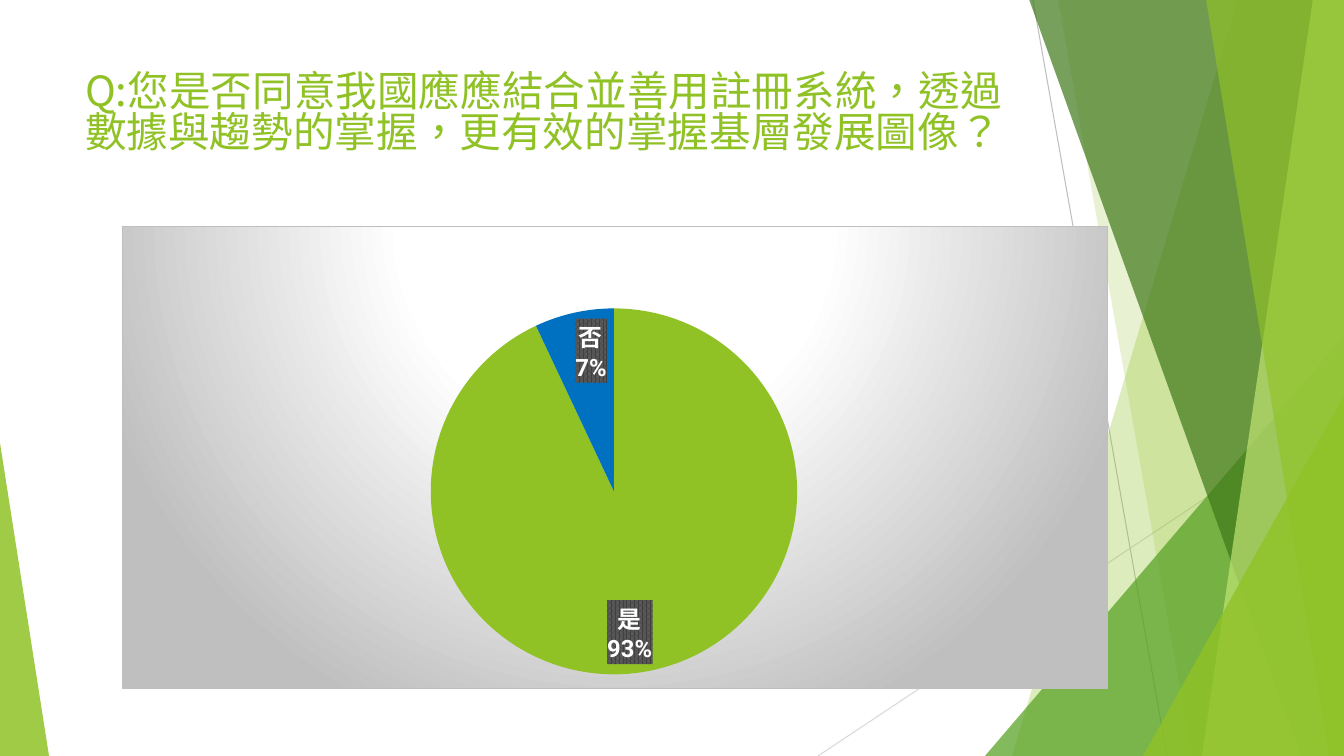
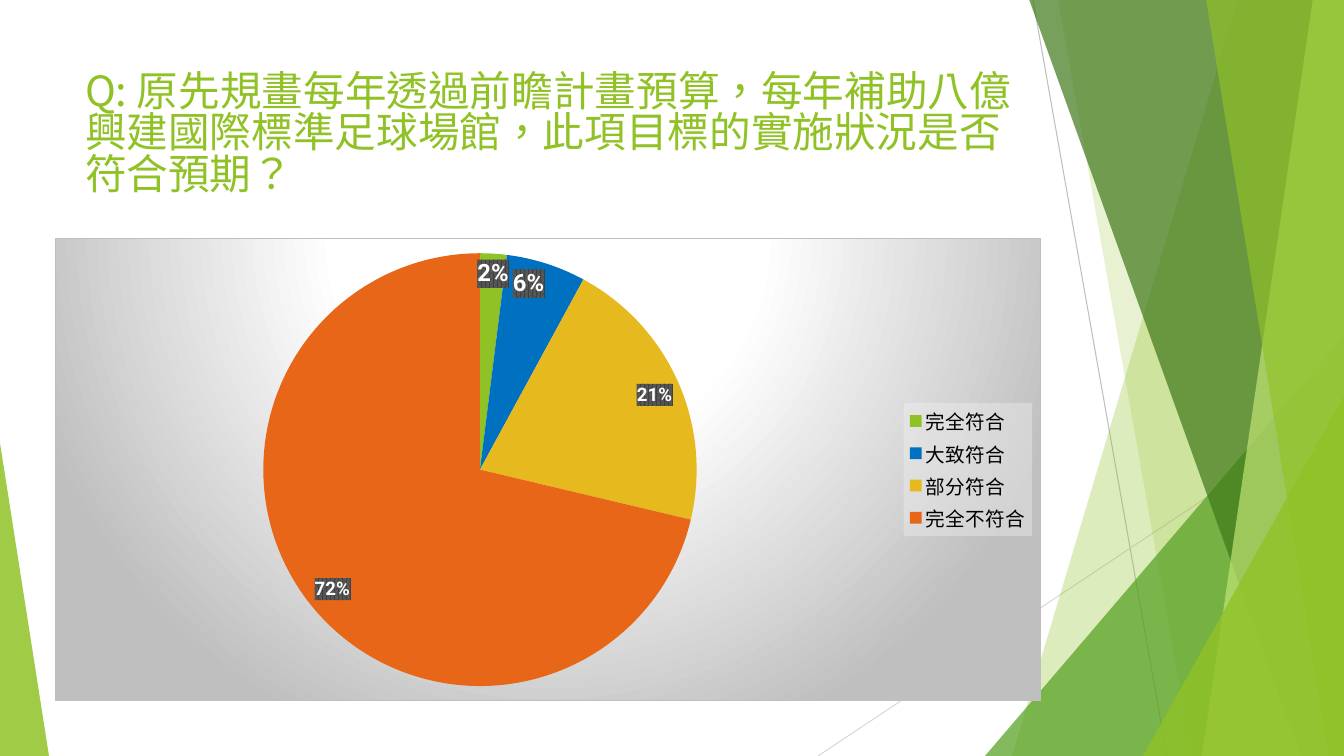
from dataclasses import dataclass
from typing import NamedTuple, Optional

from lxml.etree import SubElement
from pptx import Presentation
from pptx.chart.data import CategoryChartData
from pptx.dml.color import RGBColor
from pptx.enum.chart import XL_CHART_TYPE as ChartType
from pptx.enum.chart import XL_LABEL_POSITION as LabelPos
from pptx.enum.chart import XL_LEGEND_POSITION as LegendPos
from pptx.enum.shapes import MSO_CONNECTOR as Connector
from pptx.enum.shapes import MSO_SHAPE as Preset
from pptx.enum.text import MSO_ANCHOR as Anchor
from pptx.enum.text import MSO_AUTO_SIZE as AutoSize
from pptx.enum.text import PP_ALIGN as Align
from pptx.oxml import parse_xml
from pptx.oxml.ns import nsdecls, qn
from pptx.util import Emu, Pt

SLIDE_W, SLIDE_H = 1344, 756
EMU_PER_PX = 12192000 / SLIDE_W


def px(n: int) -> Emu:
    return Emu(round(n * EMU_PER_PX))


@dataclass(frozen=True)
class Theme:
    lime: str = "90C226"
    leaf: str = "54A021"
    forest: str = "3F7819"
    pale: str = "C0E474"
    blue: str = "0070C0"
    gold: str = "E6B91E"
    orange: str = "E76618"
    white: str = "FFFFFF"
    black: str = "000000"
    silver: str = "BFBFBF"
    mist: str = "D9D9D9"
    legend_back: str = "F2F2F2"
    label_dark: str = "404040"
    label_light: str = "595959"
    title_font: str = "Noto Sans CJK SC"
    chart_font: str = "Roboto"
    title_size: float = 29.7
    title_spacing: float = 0.83
    chart_size: float = 10
    legend_size: float = 14
    label_size: float = 13.3
    big_label_size: float = 17
    hairline: float = 0.75


THEME = Theme()
SLICE_COLORS = (THEME.lime, THEME.blue, THEME.gold, THEME.orange)


class Box(NamedTuple):
    x: int
    y: int
    w: int
    h: int

    def emu(self) -> tuple:
        return tuple(px(n) for n in self)


class Ray(NamedTuple):
    start: tuple
    end: tuple
    color: str


class Blade(NamedTuple):
    """A band that fills the right edge, left of it bounded by a slanted line."""
    top_x: int
    bottom_x: int
    color: str
    opacity: int


class Wedge(NamedTuple):
    box: Box
    tip: float
    color: str
    opacity: int


class Question(NamedTuple):
    title: str
    chart: Box
    pie: Box
    answers: dict
    big_labels: int
    has_legend: bool


TITLE_BOX = Box(75, 68, 948, 145)

RAYS = (
    Ray((1033, 0), (1167, SLIDE_H), THEME.silver),
    Ray((SLIDE_W, 406), (818, SLIDE_H), THEME.mist),
)
FACETS = (
    Blade(1238, 1012, THEME.lime, 30),
    Blade(1058, 1192, THEME.lime, 20),
    Wedge(Box(985, 336, 359, 420), 1, THEME.leaf, 72),
    Blade(1029, 1301, THEME.forest, 70),
    Blade(1313, 1202, THEME.pale, 70),
    Blade(1206, 1329, THEME.lime, 65),
    Wedge(Box(1143, 396, 201, 360), 1, THEME.lime, 80),
    Wedge(Box(0, 443, 49, 313), 0, THEME.lime, 85),
)

QUESTIONS = (
    Question(
        "Q:您是否同意我國應應結合並善用註冊系統，透過數據與趨勢的掌握，更有效的掌握基層發展圖像？",
        Box(122, 226, 986, 463), Box(431, 308, 367, 367),
        {"是": 93, "否": 7}, big_labels=2, has_legend=False,
    ),
    Question(
        "Q: 原先規畫每年透過前瞻計畫預算，每年補助八億興建國際標準足球場館，此項目標的實施狀況是否符合預期？",
        Box(55, 238, 986, 463), Box(263, 253, 434, 434),
        {"完全符合": 2, "大致符合": 6, "部分符合": 21, "完全不符合": 72},
        big_labels=2, has_legend=True,
    ),
)


def set_fill(shape, color: str, opacity: int) -> None:
    shape.shadow.inherit = False
    shape.line.fill.background()
    shape.fill.solid()
    shape.fill.fore_color.rgb = RGBColor.from_string(color)
    clr = shape.element.spPr.find(".//" + qn("a:srgbClr"))
    SubElement(clr, qn("a:alpha")).set("val", str(opacity * 1000))


def add_ray(s, ray: Ray):
    line = s.shapes.add_connector(
        Connector.STRAIGHT, *(px(n) for n in ray.start + ray.end))
    line.line.color.rgb = RGBColor.from_string(ray.color)
    line.line.width = Pt(THEME.hairline)
    SubElement(line.element.spPr, qn("a:effectLst"))
    return line


def add_facet(s, facet):
    if isinstance(facet, Wedge):
        shape = s.shapes.add_shape(Preset.ISOSCELES_TRIANGLE, *facet.box.emu())
        shape.adjustments[0] = facet.tip
    else:
        outline = s.shapes.build_freeform(facet.top_x, -1, scale=EMU_PER_PX)
        outline.add_line_segments(
            [(SLIDE_W, -1), (SLIDE_W, SLIDE_H), (facet.bottom_x, SLIDE_H)])
        shape = outline.convert_to_shape()
    set_fill(shape, facet.color, facet.opacity)
    return shape


def dress_layout(layout, s) -> None:
    """Draw the facets on a slide, then move them behind the layout's title."""
    for holder in list(layout.placeholders):
        if holder.placeholder_format.idx:
            holder.element.getparent().remove(holder.element)
        else:
            holder.left, holder.top, holder.width, holder.height = TITLE_BOX.emu()
    decor = [add_ray(s, ray) for ray in RAYS]
    decor += [add_facet(s, facet) for facet in FACETS]
    for position, shape in enumerate(decor, start=2):
        layout.shapes.element.insert(position, shape.element)


def set_font(font, size: float, color: str, name: str, bold: bool = False) -> None:
    font.size = Pt(size)
    font.color.rgb = RGBColor.from_string(color)
    font.name = name
    font.bold = bold


def write_title(s, text: str) -> None:
    tf = s.shapes.title.text_frame
    tf.text = text
    tf.auto_size = AutoSize.NONE
    tf.word_wrap = True
    tf.vertical_anchor = Anchor.TOP
    p = tf.paragraphs[0]
    p.alignment = Align.LEFT
    p.line_spacing = THEME.title_spacing
    r = p.runs[0]
    set_font(r.font, THEME.title_size, THEME.lime, THEME.title_font)
    props = r._r.get_or_add_rPr()
    props.set("lang", "zh-TW")
    latin = props.find(qn("a:latin"))
    latin.addnext(parse_xml(
        f'<a:ea {nsdecls("a")} typeface="{THEME.title_font}"/>'))


def shape_props(content: str):
    return parse_xml(f'<c:spPr {nsdecls("c", "a")}>{content}</c:spPr>')


def solid(color: str, inner: str = "") -> str:
    return f'<a:solidFill><a:srgbClr val="{color}">{inner}</a:srgbClr></a:solidFill>'


def fill_background(chart) -> None:
    stops = "".join(
        f'<a:gs pos="{at * 1000}"><a:srgbClr val="{color}"/></a:gs>'
        for at, color in ((0, THEME.white), (39, THEME.white), (100, THEME.silver)))
    chart.element.find(qn("c:chart")).addnext(shape_props(
        f'<a:gradFill><a:gsLst>{stops}</a:gsLst><a:path path="circle">'
        '<a:fillToRect l="50000" t="-80000" r="50000" b="180000"/></a:path></a:gradFill>'
        f'<a:ln w="{Pt(THEME.hairline)}">{solid(THEME.silver)}</a:ln>'))


def place_pie(chart, frame: Box, pie: Box) -> None:
    area = chart.element.find(".//" + qn("c:plotArea"))
    for old in area.findall(qn("c:layout")):
        area.remove(old)
    shares = {
        "x": (pie.x - frame.x) / frame.w, "y": (pie.y - frame.y) / frame.h,
        "w": pie.w / frame.w, "h": pie.h / frame.h,
    }
    modes = '<c:xMode val="edge"/><c:yMode val="edge"/>'
    sizes = "".join(f'<c:{k} val="{v:.3f}"/>' for k, v in shares.items())
    area.insert(0, parse_xml(
        f'<c:layout {nsdecls("c")}><c:manualLayout><c:layoutTarget val="inner"/>'
        f'{modes}{sizes}</c:manualLayout></c:layout>'))


def add_labels(series, big_labels: int, show_category: bool) -> None:
    labels = series.data_labels
    labels.show_value = True
    labels.show_percentage = False
    labels.show_category_name = show_category
    labels.number_format = '0"%"'
    labels.number_format_is_linked = False
    labels.position = LabelPos.INSIDE_END
    set_font(labels.font, THEME.label_size, THEME.white, THEME.chart_font, True)
    for i in range(big_labels):
        label = series.points[i].data_label
        set_font(label.font, THEME.big_label_size, THEME.white, THEME.chart_font, True)
        label.position = LabelPos.INSIDE_END
    for holder in list(series._element.iter(qn("c:dLbls"), qn("c:dLbl"))):
        holder.find(qn("c:txPr")).addprevious(shape_props(
            '<a:pattFill prst="pct75">'
            f'<a:fgClr><a:srgbClr val="{THEME.label_dark}"/></a:fgClr>'
            f'<a:bgClr><a:srgbClr val="{THEME.label_light}"/></a:bgClr></a:pattFill>'))
        holder.find(qn("c:showCatName")).set("val", str(int(show_category)))
        last_flag = holder.find(qn("c:showBubbleSize"))
        if last_flag is not None:
            last_flag.addnext(parse_xml(
                f'<c:separator {nsdecls("c")}>\n</c:separator>'))


def add_legend(chart) -> None:
    chart.has_legend = True
    legend = chart.legend
    legend.position = LegendPos.RIGHT
    legend.include_in_layout = False
    set_font(legend.font, THEME.legend_size, THEME.black, THEME.chart_font)
    legend._element.find(qn("c:txPr")).addprevious(
        shape_props(solid(THEME.legend_back, '<a:alpha val="39000"/>')))


def add_pie(s, question: Question) -> None:
    data = CategoryChartData(number_format='0"%"')
    data.categories = list(question.answers)
    data.add_series("Series 1", list(question.answers.values()))
    chart = s.shapes.add_chart(ChartType.PIE, *question.chart.emu(), data).chart
    chart.has_title = False
    chart.has_legend = False
    set_font(chart.font, THEME.chart_size, THEME.black, THEME.chart_font)
    fill_background(chart)
    place_pie(chart, question.chart, question.pie)
    chart.plots[0].vary_by_categories = True
    series = chart.plots[0].series[0]
    for i, color in enumerate(SLICE_COLORS[:len(question.answers)]):
        fill = series.points[i].format.fill
        fill.solid()
        fill.fore_color.rgb = RGBColor.from_string(color)
    add_labels(series, question.big_labels, show_category=not question.has_legend)
    if question.has_legend:
        add_legend(chart)


def main() -> None:
    prs = Presentation()
    prs.slide_width, prs.slide_height = px(SLIDE_W), px(SLIDE_H)
    layout = prs.slide_layouts.get_by_name("Title Only")
    slides = [prs.slides.add_slide(layout) for _ in QUESTIONS]
    dress_layout(layout, slides[0])
    for s, question in zip(slides, QUESTIONS):
        write_title(s, question.title)
        add_pie(s, question)
    prs.save("out.pptx")


if __name__ == "__main__":
    main()
